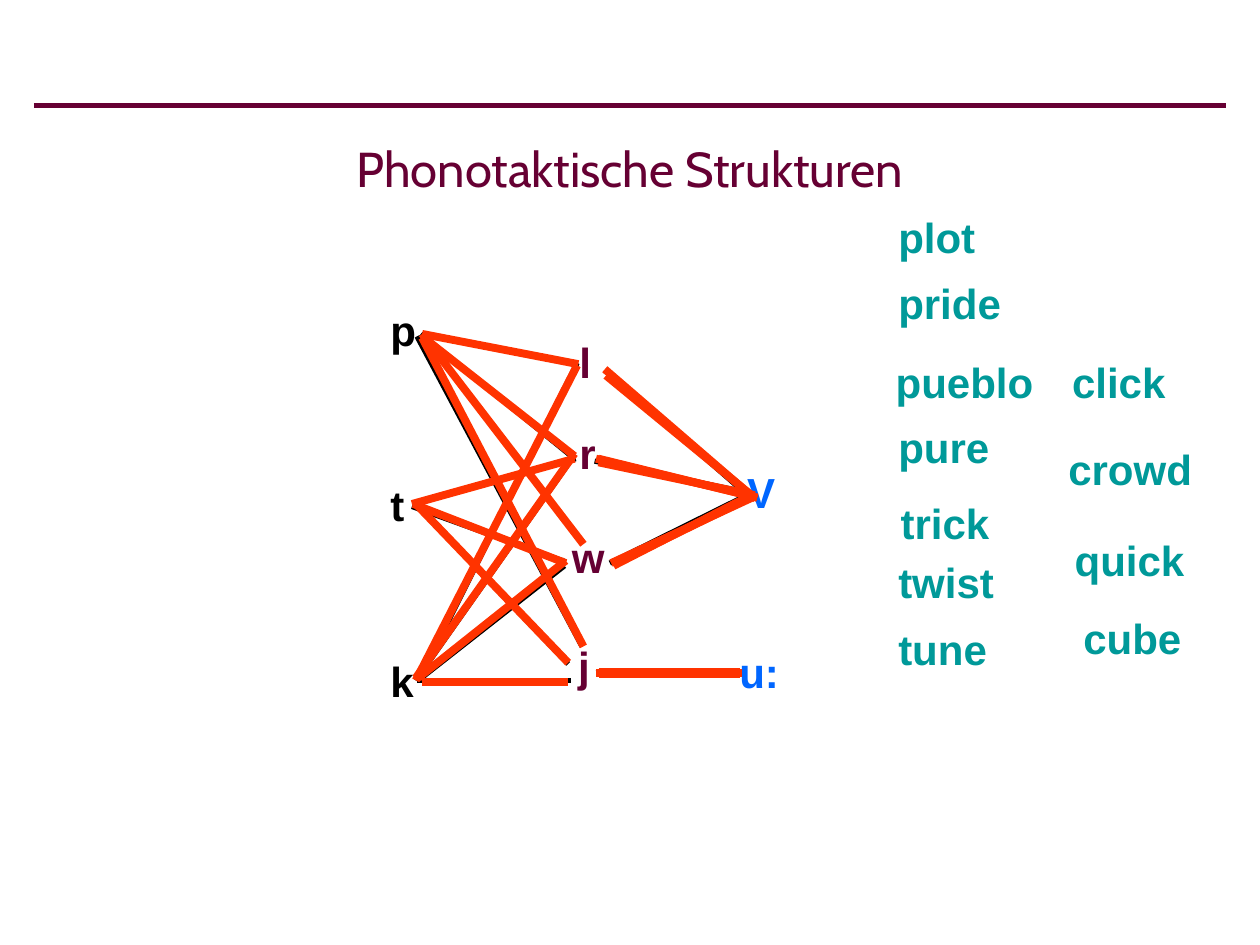
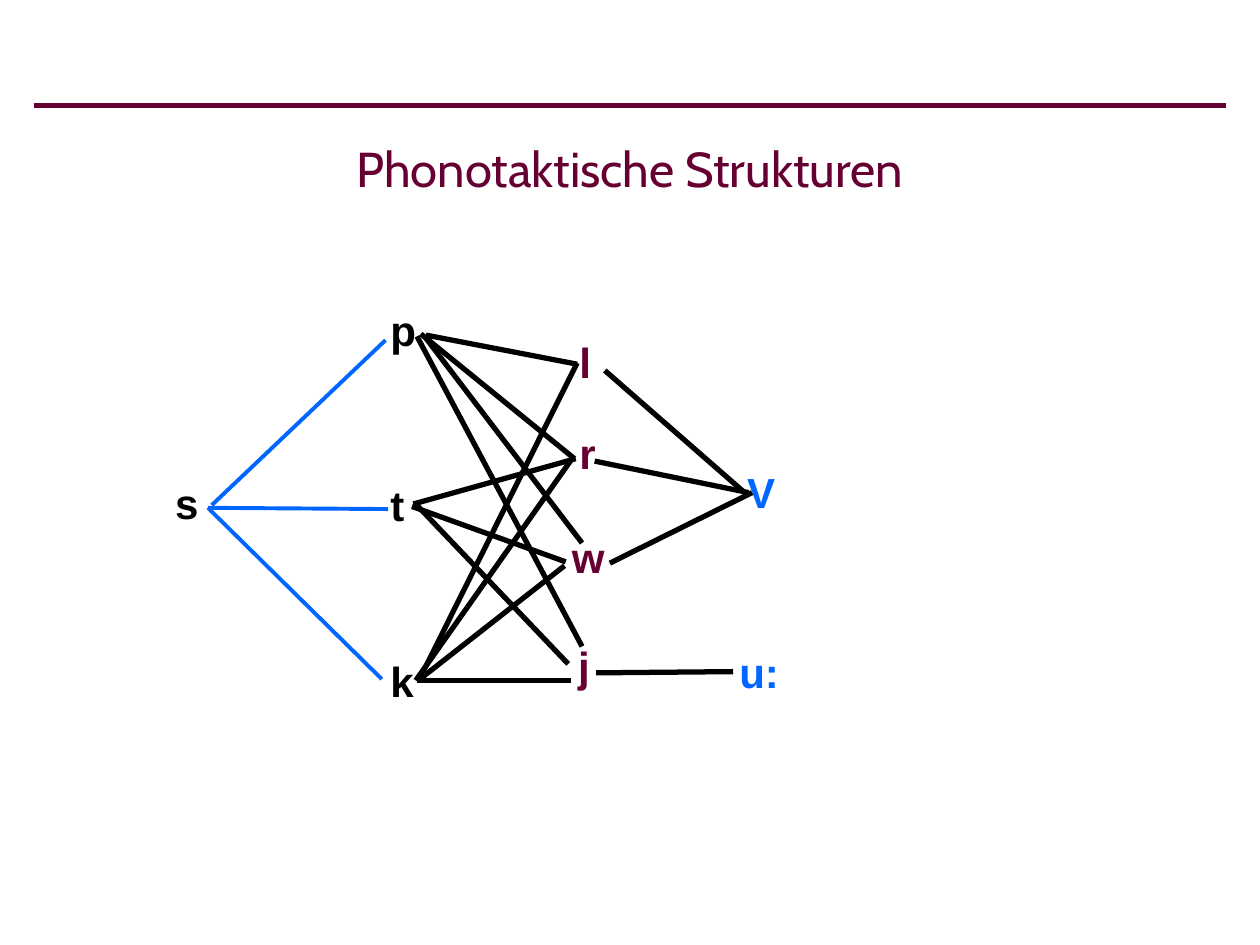
from lxml import etree
from pptx import Presentation
from pptx.dml.color import RGBColor
from pptx.enum import shapes, text
from pptx.oxml.ns import qn
from pptx.util import Pt

COLOURS = {"plum": "660033", "black": "000000", "blue": "0066FF",
           "red": "FF3300", "teal": "009999"}
TITLE = "Phonotaktische Strukturen"
LETTER_HEIGHT = 36

ONSET = [("s", 93, 269.3, 28, "black")]
SOUNDS = [
    ("p", 216, 170.6, 28, "black"),
    ("t", 216, 270.7, 28, "black"),
    ("k", 216, 370.8, 28, "black"),
    ("l", 324, 188.6, 28, "plum"),
    ("r", 324, 240.5, 28, "plum"),
    ("w", 319.7, 300.2, 39.6, "plum"),
    ("j", 323.3, 362.2, 28, "plum"),
    ("V", 419.8, 262.8, 39.6, "blue"),
    ("u:", 415.4, 365.8, 39.6, "blue"),
]

ONSET_LINKS = [
    (121, 288.7, 220.3, 194.4),
    (118.8, 290.2, 221.8, 290.9),
    (118.8, 290.2, 218.2, 388.1),
]
SOUND_LINKS = [
    (243.4, 191.5, 329.8, 208.1),
    (240.5, 190.8, 328.3, 262.1),
    (242.6, 192.2, 332.6, 310.3),
    (238.3, 192.2, 332.6, 369.4),
    (236.2, 288, 329, 262.1),
    (235.4, 289.4, 323.3, 321.1),
    (236.9, 287.3, 324.7, 379.4),
    (239, 389.5, 329.8, 207.4),
    (237.6, 388.8, 326.9, 262.1),
    (239, 388.8, 322.6, 323.3),
    (238.3, 388.8, 326.2, 388.8),
    (345.6, 211.7, 425.5, 281.5),
    (339.8, 263.5, 427.7, 281.5),
    (348.5, 321.8, 429.8, 281.5),
    (340.6, 384.5, 419, 383.8),
]

WORDS = [
    ("plot", 506.2, 117.4, 116.6,
     [(241.2, 190.8, 330.5, 208.1), (346.3, 214.6, 432, 285.1)]),
    ("pride", 506.2, 154.8, 116.6,
     [(241.2, 192.2, 328.3, 260.6), (340.6, 262.1, 432.7, 284.4)]),
    ("pueblo", 504.7, 200.2, 116.6,
     [(241.2, 190.8, 333.4, 311), (350.6, 323.3, 427.7, 283.7)]),
    ("trick", 507.6, 280.8, 116.6,
     [(235.4, 288, 328.3, 262.1), (342, 262.1, 432.7, 284.4)]),
    ("twist", 506.2, 314.6, 116.6,
     [(236.2, 288, 323.3, 321.8), (349.2, 321.8, 429.8, 284.4)]),
    ("pure", 506.2, 237.6, 116.6,
     [(241.2, 193, 333.4, 369.4), (342, 383.8, 422.6, 383.8)]),
    ("click", 605.5, 200.2, 82,
     [(237.6, 388.8, 329.8, 208.8), (345.6, 211, 429.1, 283)]),
    ("crowd", 603.4, 249.8, 88.6,
     [(237.6, 387.4, 328.3, 259.2), (342, 264.2, 431.3, 283)]),
    ("quick", 607, 301.7, 85.7,
     [(239, 387.4, 323.3, 320.4), (350.6, 322.6, 431.3, 283)]),
    ("cube", 612, 346.3, 76.3,
     [(241.2, 389.5, 324.7, 389.5), (342, 385.2, 422.6, 385.2)]),
    ("tune", 506.2, 352.8, 116.6,
     [(239, 289.4, 324.7, 378.7), (340.6, 384.5, 424.1, 384.5)]),
]


def rgb(colour):
    return RGBColor.from_string(COLOURS[colour])


def add_line(parent, ends, colour, weight):
    line = parent.add_connector(shapes.MSO_CONNECTOR.STRAIGHT, *map(Pt, ends))
    line.line.color.rgb = rgb(colour)
    line.line.width = Pt(weight)
    properties = line._element.find(qn("p:spPr"))
    etree.SubElement(properties, qn("a:effectLst"))


def add_label(parent, wording, box, colour, size=24, face="Arial", bold=True,
              align=text.PP_ALIGN.JUSTIFY, anchor=text.MSO_ANCHOR.TOP):
    frame = parent.add_textbox(*map(Pt, box)).text_frame
    frame.word_wrap = True
    frame.vertical_anchor = anchor
    paragraph = frame.paragraphs[0]
    paragraph.text = wording
    paragraph.alignment = align
    font = paragraph.font
    font.name, font.size, font.bold = face, Pt(size), bold
    font.color.rgb = rgb(colour)


def add_network(slide, letters, links, colour, weight):
    network = slide.shapes.add_group_shape().shapes
    for letter, left, top, width, letter_colour in letters:
        add_label(network, letter, (left, top, width, LETTER_HEIGHT), letter_colour)
    for ends in links:
        add_line(network, ends, colour, weight)


def add_word(slide, word, left, top, width, route):
    group = slide.shapes.add_group_shape().shapes
    add_label(group, word, (left, top, width, LETTER_HEIGHT), "teal")
    for ends in route:
        add_line(group, ends, "red", 4.5)


def add_titled_slide(deck):
    slide = deck.slides.add_slide(deck.slide_layouts[6])
    add_line(slide.shapes, (19.4, 60.3, 700.6, 60.3), "plum", 3)
    add_label(slide.shapes, TITLE, (19.6, 68.6, 680.4, 54.7), "plum", 28, "Cabin",
              False, text.PP_ALIGN.CENTER, text.MSO_ANCHOR.MIDDLE)
    return slide


def main():
    deck = Presentation()
    deck.slide_width, deck.slide_height = Pt(720), Pt(540)

    words_slide = add_titled_slide(deck)
    add_network(words_slide, SOUNDS, SOUND_LINKS, "black", 3)
    for word in WORDS:
        add_word(words_slide, *word)

    onset_slide = add_titled_slide(deck)
    add_network(onset_slide, ONSET, ONSET_LINKS, "blue", 2.25)
    add_network(onset_slide, SOUNDS, SOUND_LINKS, "black", 3)

    deck.save("out.pptx")


if __name__ == "__main__":
    main()
